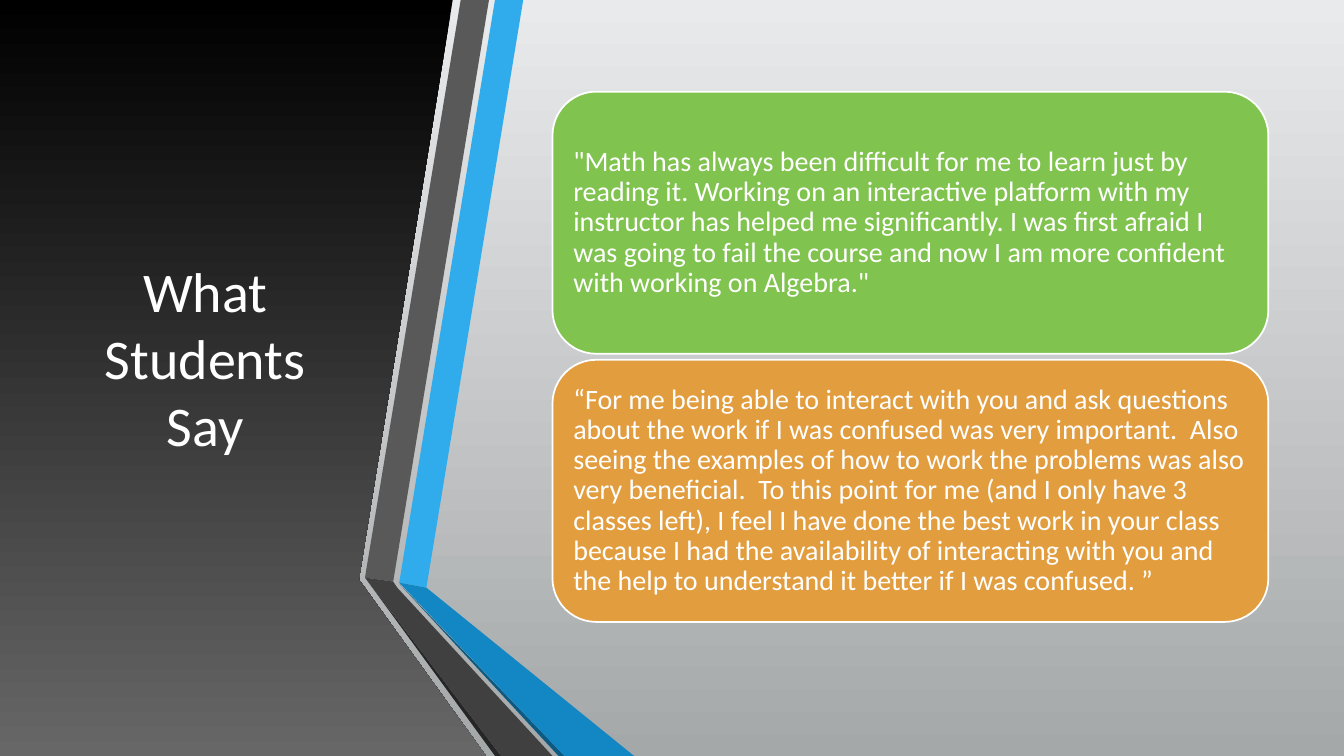
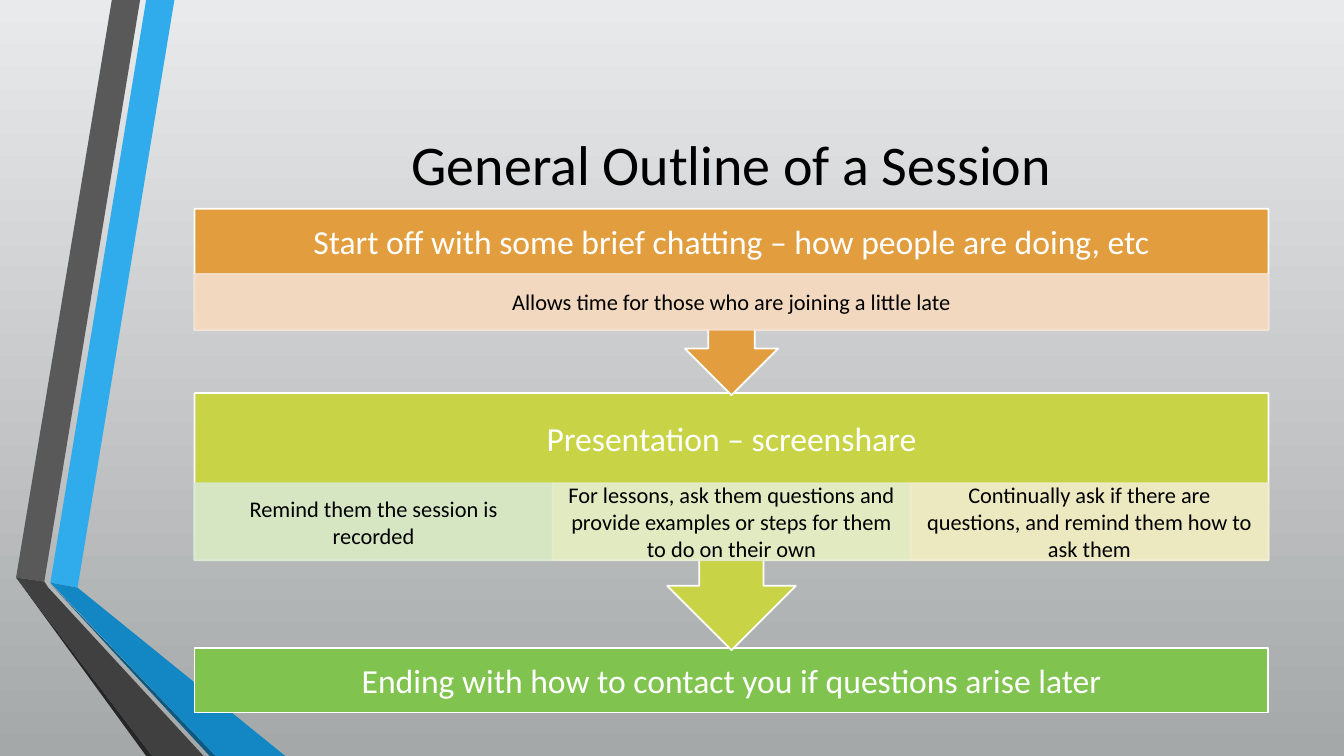
"""Build two slides on an online class: student quotes and a session outline."""
from lxml import etree
from pptx import Presentation
from pptx import util as u
from pptx.dml.color import RGBColor
from pptx.enum import shapes, text
from pptx.oxml.ns import qn

FONT = "Calibri"
WHITE, BLACK = RGBColor(255, 255, 255), RGBColor(0, 0, 0)
GREEN = RGBColor(0x80, 0xC3, 0x4F)
ORANGE = RGBColor(0xE2, 0x9D, 0x3E)
LIME = RGBColor(0xC8, 0xD3, 0x46)
PALE_ORANGE = RGBColor(0xF4, 0xDF, 0xCE)
PALE_GREEN = RGBColor(0xD8, 0xE9, 0xD0)
PALE_LIME = RGBColor(0xE5, 0xED, 0xCF)
PALE_YELLOW = RGBColor(0xF1, 0xEC, 0xCF)
BACKDROP = RGBColor(0xE9, 0xEA, 0xEB), RGBColor(0xA5, 0xA8, 0xA9)
PANEL_SHADE = BLACK, RGBColor(0x67, 0x67, 0x67)

WIDTH, HEIGHT = 13.33, 7.5
RIGHT = 12.58
RIBBON = [
    (RGBColor(0x30, 0xAC, 0xEC), [(0.5, 5.78), (0.77, 5.83), (1.73, 0), (1.45, 0)]),
    (RGBColor(0x59, 0x59, 0x59), [(1.39, 0), (1.11, 0), (0.16, 5.73), (0.44, 5.77)]),
    (RGBColor(0x26, 0x26, 0x26), [(0.16, 5.73), (1.45, 7.5), (1.51, 7.5)]),
    (RGBColor(0x0C, 0x5A, 0x82), [(0.5, 5.79), (2.08, 7.5), (2.14, 7.5)]),
    (RGBColor(0x12, 0x87, 0xC3), [(0.5, 5.78), (2.14, 7.5), (2.83, 7.5), (0.77, 5.83)]),
    (RGBColor(0x40, 0x40, 0x40),
     [(0.16, 5.73), (1.51, 7.5), (2.02, 7.5), (0.48, 5.83), (0.44, 5.77)]),
]
PANEL = [(0, 0), (4.49, 0), (3.56, 5.75), (4.82, 7.5), (0, 7.5)]

QUOTES = [
    (GREEN, "\"Math has always been difficult for me to learn just by reading it. "
            "Working on an interactive platform with my instructor has helped me "
            "significantly. I was first afraid I was going to fail the course and now "
            "I am more confident with working on Algebra.\""),
    (ORANGE, "“For me being able to interact with you and ask questions about the work "
             "if I was confused was very important.  Also seeing the examples of how to "
             "work the problems was also very beneficial.  To this point for me (and I "
             "only have 3 classes left), I feel I have done the best work in your class "
             "because I had the availability of interacting with you and the help to "
             "understand it better if I was confused. ”"),
]
QUOTE_LEFT, QUOTE_TOP, QUOTE_HEIGHT, QUOTE_GAP = 5.48, 0.91, 2.6, 0.06

STEPS = [
    (1.85, ORANGE, "Start off with some brief chatting – how people are doing, etc",
     [(PALE_ORANGE, "Allows time for those who are joining a little late")]),
    (2.55, LIME, "Presentation – screenshare",
     [(PALE_GREEN, "Remind them the session is recorded"),
      (PALE_LIME, "For lessons, ask them questions and provide examples or steps "
                  "for them to do on their own"),
      (PALE_YELLOW, "Continually ask if there are questions, and remind them how to "
                    "ask them")]),
    (0.64, GREEN, "Ending with how to contact you if questions arise later", []),
]
STEP_LEFT, STEP_TOP, STEP_OVERLAP = 1.93, 2.07, 0.02
BODY_SHARE, HEADER_SHARE = 0.65, 0.54


def shade(fill, colors):
    """Fill with a gradient that runs from top to bottom."""
    fill.gradient()
    fill.gradient_angle = 270
    for stop, color in zip(fill.gradient_stops, colors):
        stop.color.rgb = color


def write(sp, content, size, color=WHITE, align=text.PP_ALIGN.CENTER,
          insets=(0.1, 0.05, 0.1, 0.05), spacing=1.0):
    """Put one formatted, vertically centred paragraph in a shape."""
    tf = sp.text_frame
    tf.word_wrap = True
    tf.auto_size = text.MSO_AUTO_SIZE.NONE
    tf.vertical_anchor = text.MSO_ANCHOR.MIDDLE
    tf.margin_left, tf.margin_top, tf.margin_right, tf.margin_bottom = map(u.Inches, insets)
    p = tf.paragraphs[0]
    p.alignment, p.line_spacing = align, spacing
    r = p.add_run()
    r.text = content
    r.font.name, r.font.size, r.font.color.rgb = FONT, u.Pt(size), color


def add_box(s, kind, box, color, line=WHITE, opacity=None):
    """Add an outlined preset shape."""
    sp = s.shapes.add_shape(kind, *map(u.Inches, box))
    sp.shadow.inherit = False
    sp.fill.solid()
    sp.fill.fore_color.rgb = color
    sp.line.color.rgb = line
    sp.line.width = u.Pt(1.25)
    if opacity:
        for clr in sp.element.spPr.iter(qn("a:srgbClr")):
            etree.SubElement(clr, qn("a:alpha")).set("val", str(opacity * 1000))
    return sp


def add_outline(s, points, dx=0):
    """Add a closed polygon without a line."""
    pts = [(u.Inches(x + dx), u.Inches(y)) for x, y in points]
    builder = s.shapes.build_freeform(*pts[0])
    builder.add_line_segments(pts[1:], close=True)
    sp = builder.convert_to_shape()
    sp.shadow.inherit = False
    sp.line.fill.background()
    return sp


def add_ribbon(s, dx=0):
    """Draw the folded two-colour ribbon."""
    for color, points in RIBBON:
        sp = add_outline(s, points, dx)
        sp.fill.solid()
        sp.fill.fore_color.rgb = color


def set_title(s, content, box, color):
    """Place the title in front of what is drawn so far."""
    title = s.shapes.title
    title.left, title.top, title.width, title.height = map(u.Inches, box)
    write(title, content, 40, color)
    title.element.getparent().append(title.element)


def new_slide(prs):
    """Add a title-only slide with the shared backdrop."""
    s = prs.slides.add_slide(prs.slide_layouts[5])
    shade(s.background.fill, BACKDROP)
    return s


def build_quotes(prs):
    """Build the slide with student quotes."""
    s = new_slide(prs)
    shade(add_outline(s, PANEL).fill, PANEL_SHADE)
    add_ribbon(s, 3.46)
    set_title(s, "What Students Say", (0.59, 0.75, 2.89, 5.58), WHITE)
    for i, (color, quote) in enumerate(QUOTES):
        top = QUOTE_TOP + i * (QUOTE_HEIGHT + QUOTE_GAP)
        sp = add_box(s, shapes.MSO_SHAPE.ROUNDED_RECTANGLE,
                     (QUOTE_LEFT, top, RIGHT - QUOTE_LEFT, QUOTE_HEIGHT), color)
        write(sp, quote, 20, align=text.PP_ALIGN.LEFT, insets=[0.08] * 4, spacing=0.9)


def add_step(s, top, height, color, heading, details):
    """Add one step, with a row of details and an arrow if it has details."""
    width = RIGHT - STEP_LEFT
    kind = shapes.MSO_SHAPE.DOWN_ARROW_CALLOUT if details else shapes.MSO_SHAPE.RECTANGLE
    body = height * BODY_SHARE
    header = body * HEADER_SHARE
    row = body - header
    sp = add_box(s, kind, (STEP_LEFT, top, width, height), color)
    write(sp, heading, 24, insets=(0.19, 0, 0.19, row if details else 0))
    for i, (pale, detail) in enumerate(details):
        cell = width / len(details)
        sp = add_box(s, shapes.MSO_SHAPE.RECTANGLE,
                     (STEP_LEFT + i * cell, top + header, cell, row), pale, pale, 90)
        write(sp, detail, 16, BLACK, insets=(0.12, 0.02, 0.12, 0.02))


def build_outline(prs):
    """Build the slide with the steps of a session."""
    s = new_slide(prs)
    add_ribbon(s)
    set_title(s, "General Outline of a Session", (1.93, 0.75, 10.65, 1.74), BLACK)
    top, placed = STEP_TOP, []
    for step in STEPS:
        placed.append((top, *step))
        top += step[0] - STEP_OVERLAP
    for step in reversed(placed):
        add_step(s, *step)


def main():
    """Build and save the presentation."""
    prs = Presentation()
    prs.slide_width, prs.slide_height = u.Inches(WIDTH), u.Inches(HEIGHT)
    build_quotes(prs)
    build_outline(prs)
    prs.save("out.pptx")


if __name__ == "__main__":
    main()
